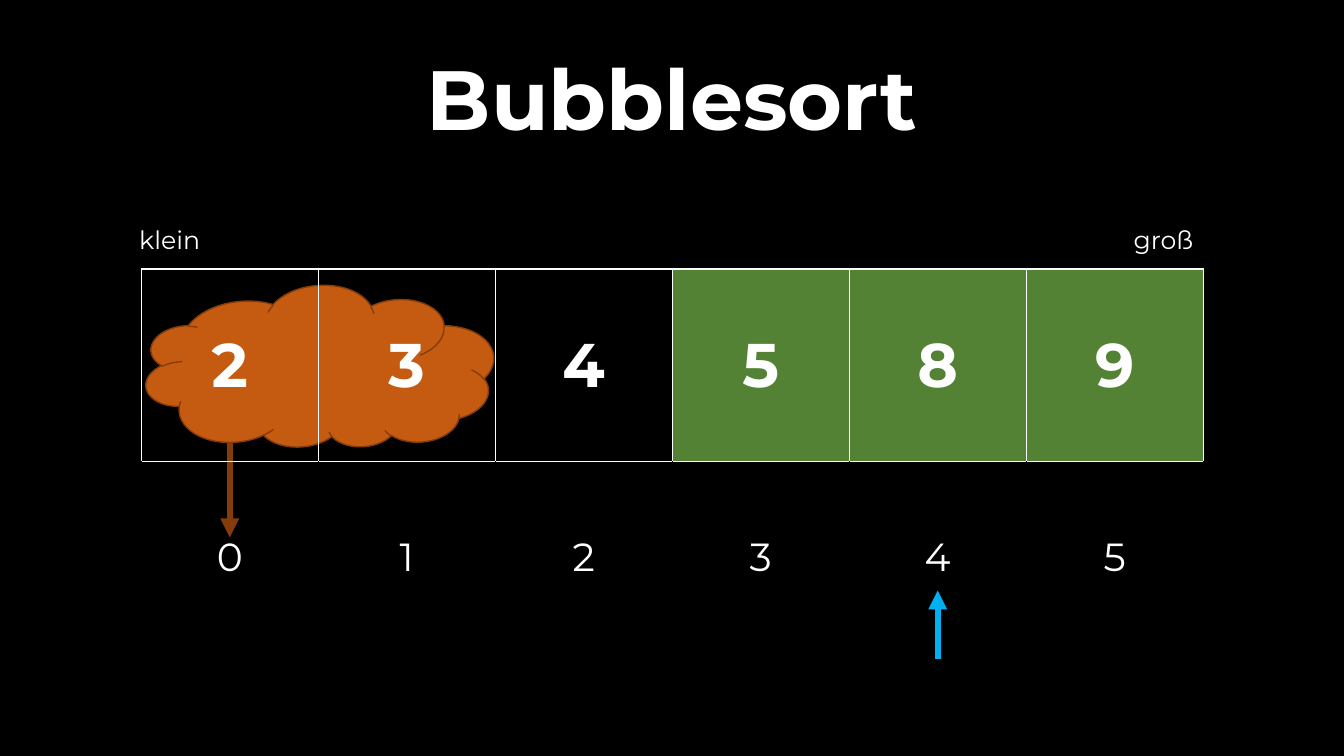
from dataclasses import dataclass

from lxml.etree import SubElement
from pptx import Presentation
from pptx.dml.color import RGBColor
from pptx.enum.shapes import MSO_CONNECTOR, MSO_SHAPE
from pptx.enum.text import MSO_ANCHOR, PP_ALIGN
from pptx.oxml import parse_xml
from pptx.oxml.ns import nsdecls, qn
from pptx.util import Cm, Pt


@dataclass(frozen=True)
class Theme:
    font: str = "Montserrat"
    background: str = "000000"
    text: str = "FFFFFF"
    sorted_fill: str = "548235"
    bubble: str = "C55A11"
    bubble_line: str = "843C0B"
    pointer: str = "00B0F0"
    title_size: int = 60
    value_size: int = 44
    index_size: int = 28
    label_size: int = 18


@dataclass(frozen=True)
class Box:
    """A region in centimetres."""
    left: float
    top: float
    width: float
    height: float

    def lengths(self):
        return Cm(self.left), Cm(self.top), Cm(self.width), Cm(self.height)


THEME = Theme()
VALUES = (2, 3, 4, 5, 8, 9)
SORTED_FROM = 3
BUBBLE_INDEX = 0
POINTER_INDEX = 4


def color(code):
    return RGBColor.from_string(code)


def write(frame, text, size, bold=False, align=PP_ALIGN.CENTER):
    para = frame.paragraphs[0]
    para.alignment = align
    span = para.add_run()
    span.text = text
    span.font.name = THEME.font
    span.font.size = Pt(size)
    span.font.bold = bold
    span.font.color.rgb = color(THEME.text)
    return para


def add_arrow(page, x, start, end, code):
    """Vertical arrow pointing at its end."""
    arrow = page.shapes.add_connector(
        MSO_CONNECTOR.STRAIGHT, Cm(x), Cm(start), Cm(x), Cm(end))
    arrow.line.color.rgb = color(code)
    arrow.line.width = Pt(4.5)
    SubElement(arrow.line._get_or_add_ln(), qn("a:tailEnd"), type="triangle")
    SubElement(arrow._element.spPr, qn("a:effectLst"))


def set_borders(cell, codes):
    """Codes run left, right, top, bottom."""
    properties = cell._tc.get_or_add_tcPr()
    for place, (side, code) in enumerate(zip("LRTB", codes)):
        properties.insert(place, parse_xml(
            f'<a:ln{side} {nsdecls("a")} w="{Pt(1)}"><a:solidFill>'
            f'<a:srgbClr val="{code}"/></a:solidFill></a:ln{side}>'))


def add_title(page, box):
    title = page.shapes.title
    title.left, title.top, title.width, title.height = box.lengths()
    title.text_frame.vertical_anchor = MSO_ANCHOR.MIDDLE
    para = write(title.text_frame, "Bubblesort", THEME.title_size, bold=True)
    para.line_spacing = 0.9
    para.space_before = Pt(10)


def add_bubble(page, box):
    """Cloud around the compared pair, with an arrow to its index."""
    column = box.width / len(VALUES)
    left = box.left + BUBBLE_INDEX * column
    add_arrow(page, left + column / 2, box.top + 3.25, box.top + 6.76,
              THEME.bubble_line)
    cloud_box = Box(left + 0.1, box.top + 0.43, 8.79, 4.14)
    cloud = page.shapes.add_shape(MSO_SHAPE.CLOUD, *cloud_box.lengths())
    cloud.shadow.inherit = False
    cloud.rotation = 355.5
    cloud._element.spPr.xfrm.set("flipV", "1")
    cloud.fill.solid()
    cloud.fill.fore_color.rgb = color(THEME.bubble)
    cloud.line.color.rgb = color(THEME.bubble_line)
    cloud.line.width = Pt(1)


def add_array(page, box):
    """Values above, indices below."""
    table = page.shapes.add_table(2, len(VALUES), *box.lengths()).table
    table.first_row = table.horz_banding = False
    for column in table.columns:
        column.width = Cm(box.width / len(VALUES))
    white, black = THEME.text, THEME.background
    rows = (
        (VALUES, THEME.value_size, True, (white,) * 4),
        (range(len(VALUES)), THEME.index_size, False,
         (black, black, white, black)),
    )
    for row, (numbers, size, bold, borders) in enumerate(rows):
        table.rows[row].height = Cm(box.height / 2)
        for index, number in enumerate(numbers):
            cell = table.cell(row, index)
            cell.vertical_anchor = MSO_ANCHOR.MIDDLE
            write(cell.text_frame, str(number), size, bold)
            if row == 0 and index >= SORTED_FROM:
                cell.fill.solid()
                cell.fill.fore_color.rgb = color(THEME.sorted_fill)
            else:
                cell.fill.background()
            set_borders(cell, borders)


def add_labels(page, box):
    """Size labels at both ends of the array."""
    width = 3.84
    labels = (("klein", box.left - 0.3, PP_ALIGN.LEFT),
              ("groß", box.left + box.width - width, PP_ALIGN.RIGHT))
    for text, left, align in labels:
        label_box = Box(left, box.top - 1.24, width, 1.02)
        label = page.shapes.add_textbox(*label_box.lengths())
        label.text_frame.word_wrap = True
        write(label.text_frame, text, THEME.label_size, align=align)


def add_pointer(page, box):
    x = box.left + (POINTER_INDEX + 0.5) * box.width / len(VALUES)
    add_arrow(page, x, box.top + 9.83, box.top + 8.1, THEME.pointer)


def main():
    deck = Presentation()
    deck.slide_width, deck.slide_height = Cm(33.87), Cm(19.05)
    page = deck.slides.add_slide(deck.slide_layouts.get_by_name("Title Only"))
    page.background.fill.solid()
    page.background.fill.fore_color.rgb = color(THEME.background)

    array_box = Box(3.56, 6.78, 26.76, 9.7)
    add_title(page, Box(0.38, 0.79, 33.1, 3.6))
    add_bubble(page, array_box)
    add_array(page, array_box)
    add_labels(page, array_box)
    add_pointer(page, array_box)
    deck.save("out.pptx")


if __name__ == "__main__":
    main()
